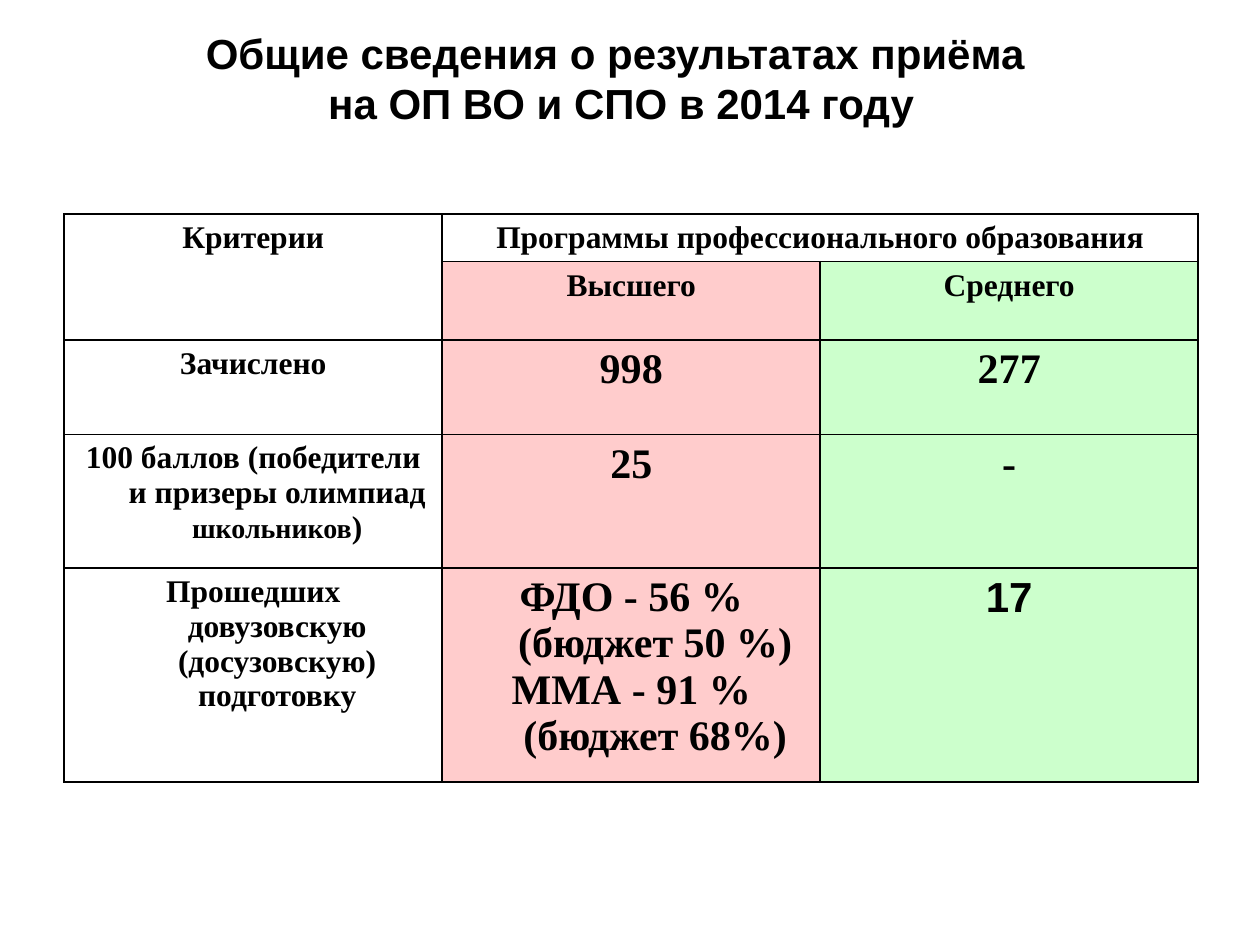
from pptx import Presentation
from pptx.dml.color import RGBColor
from pptx.enum.text import MSO_ANCHOR, PP_ALIGN
from pptx.oxml.ns import qn
from pptx.util import Emu, Inches, Pt
from lxml.etree import SubElement

WIDTH, HEIGHT = Inches(10), Inches(7.5)
COLOURS = {"ink": "000000", "higher": "FFCCCC", "secondary": "CCFFCC"}
SERIF, SANS = "Times New Roman", "Arial"
TITLE = "Общие сведения о результатах приёма \vна ОП ВО и СПО в 2014 году"

COLUMN_WIDTH = 3
COLUMN_FILLS = [None, "higher", "secondary"]
ROW_HEIGHTS = [0.34, 0.62, 0.75, 1.06, 1.7]
HANGING = Inches(0.38)

# Each cell is a list of paragraphs; each paragraph a list of (text, size, font)
LABEL, FIGURE = (18, SERIF), (24, SERIF)
ROWS = [
    [[[("Критерии", *LABEL)]],
     [[("Программы профессионального образования", *LABEL)]], []],
    [[], [[("Высшего", *LABEL)]], [[("Среднего", *LABEL)]]],
    [[[("Зачислено", *LABEL)]], [[("998", *FIGURE)]], [[("277", *FIGURE)]]],
    [[[("100 баллов (победители и призеры олимпиад ", *LABEL),
       ("школьников", 16, SERIF), (")", *LABEL)]],
     [[("25", *FIGURE)]], [[("-", *FIGURE)]]],
    [[[("Прошедших довузовскую (досузовскую) подготовку", *LABEL)]],
     [[("ФДО - 56 % (бюджет 50 %)", *FIGURE)],
      [("ММА - 91 % (бюджет 68%)", *FIGURE)]],
     [[("17", 24, SANS)]]],
]


def colour(name):
    return RGBColor.from_string(COLOURS[name])


def format_font(font, size, name):
    for key, value in {"size": Pt(size), "name": name, "bold": True}.items():
        setattr(font, key, value)
    font.color.rgb = colour("ink")


def place_title(slide):
    title = slide.shapes.title
    box = {"left": 0.043 * WIDTH, "top": 0, "width": 0.9 * WIDTH, "height": 0.164 * HEIGHT}
    for key, value in box.items():
        setattr(title, key, Emu(int(value)))
    frame = title.text_frame
    frame.text = TITLE
    frame.vertical_anchor = MSO_ANCHOR.MIDDLE
    paragraph = frame.paragraphs[0]
    paragraph.alignment = PP_ALIGN.CENTER
    for run in paragraph.runs:
        format_font(run.font, 24, SANS)


def add_borders(cell):
    properties = cell._tc.get_or_add_tcPr()
    for side in ("a:lnL", "a:lnR", "a:lnT", "a:lnB"):
        line = SubElement(properties, qn(side), w=str(Pt(1)))
        fill = SubElement(line, qn("a:solidFill"))
        SubElement(fill, qn("a:srgbClr"), val=COLOURS["ink"])


def fill_cell(cell, fill_name):
    if fill_name:
        cell.fill.solid()
        cell.fill.fore_color.rgb = colour(fill_name)
    else:
        cell.fill.background()


def write_cell(cell, paragraphs):
    frame = cell.text_frame
    for index, runs in enumerate(paragraphs):
        paragraph = frame.add_paragraph() if index else frame.paragraphs[0]
        paragraph.alignment = PP_ALIGN.CENTER
        # Hanging indent: later lines start further right
        properties = paragraph._p.get_or_add_pPr()
        properties.set("marL", str(HANGING))
        properties.set("indent", str(-HANGING))
        for text, size, font_name in runs:
            run = paragraph.add_run()
            run.text = text
            format_font(run.font, size, font_name)


def add_results_table(slide):
    frame = slide.shapes.add_table(
        len(ROWS), len(COLUMN_FILLS), Inches(0.51), Inches(1.7),
        Inches(COLUMN_WIDTH * len(COLUMN_FILLS)), Inches(sum(ROW_HEIGHTS)))
    table = frame.table
    table.first_row = table.horz_banding = False
    for column in table.columns:
        column.width = Inches(COLUMN_WIDTH)
    for row, height in zip(table.rows, ROW_HEIGHTS):
        row.height = Inches(height)

    # Header cells that span rows or columns
    table.cell(0, 0).merge(table.cell(1, 0))
    table.cell(0, 1).merge(table.cell(0, 2))

    for row_index, row in enumerate(ROWS):
        for column_index, paragraphs in enumerate(row):
            cell = table.cell(row_index, column_index)
            add_borders(cell)
            fill_cell(cell, COLUMN_FILLS[column_index] if row_index else None)
            write_cell(cell, paragraphs)


def main():
    presentation = Presentation()
    presentation.slide_width, presentation.slide_height = WIDTH, HEIGHT
    slide = presentation.slides.add_slide(presentation.slide_layouts[5])
    place_title(slide)
    add_results_table(slide)
    presentation.save("out.pptx")


if __name__ == "__main__":
    main()
